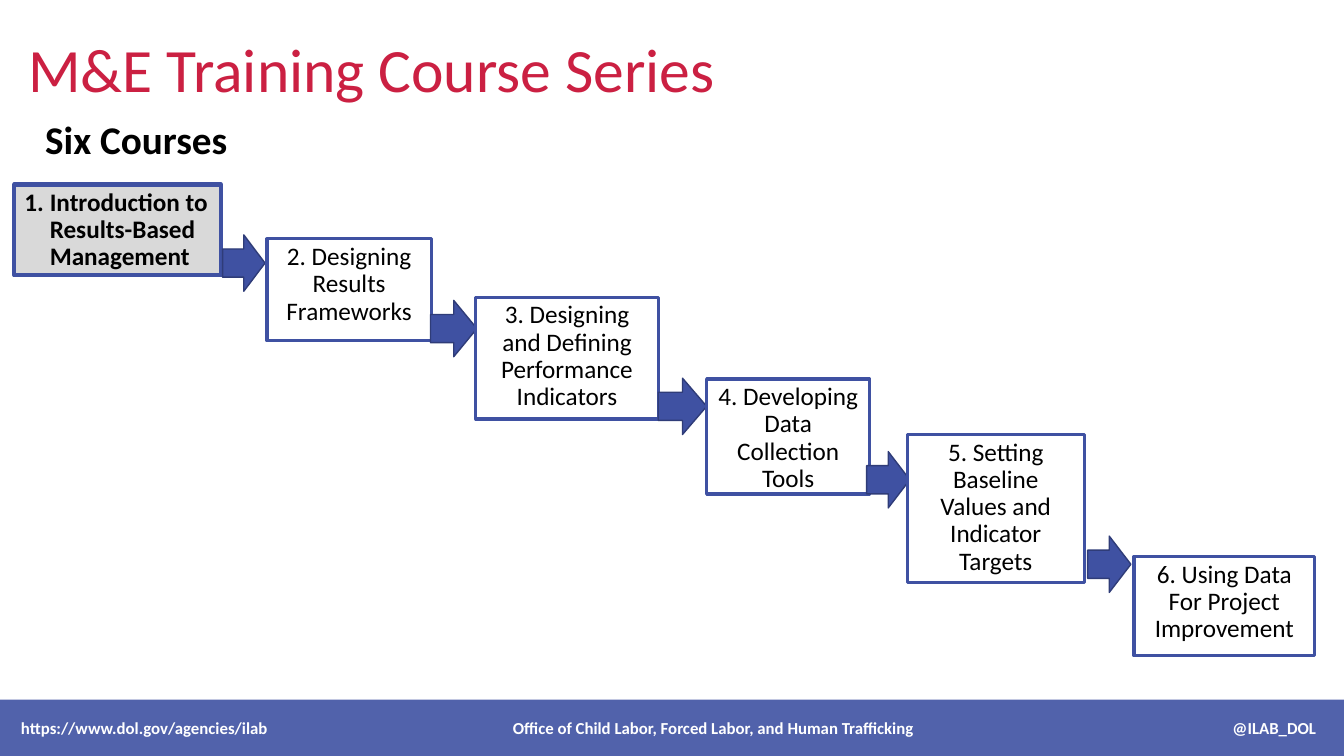
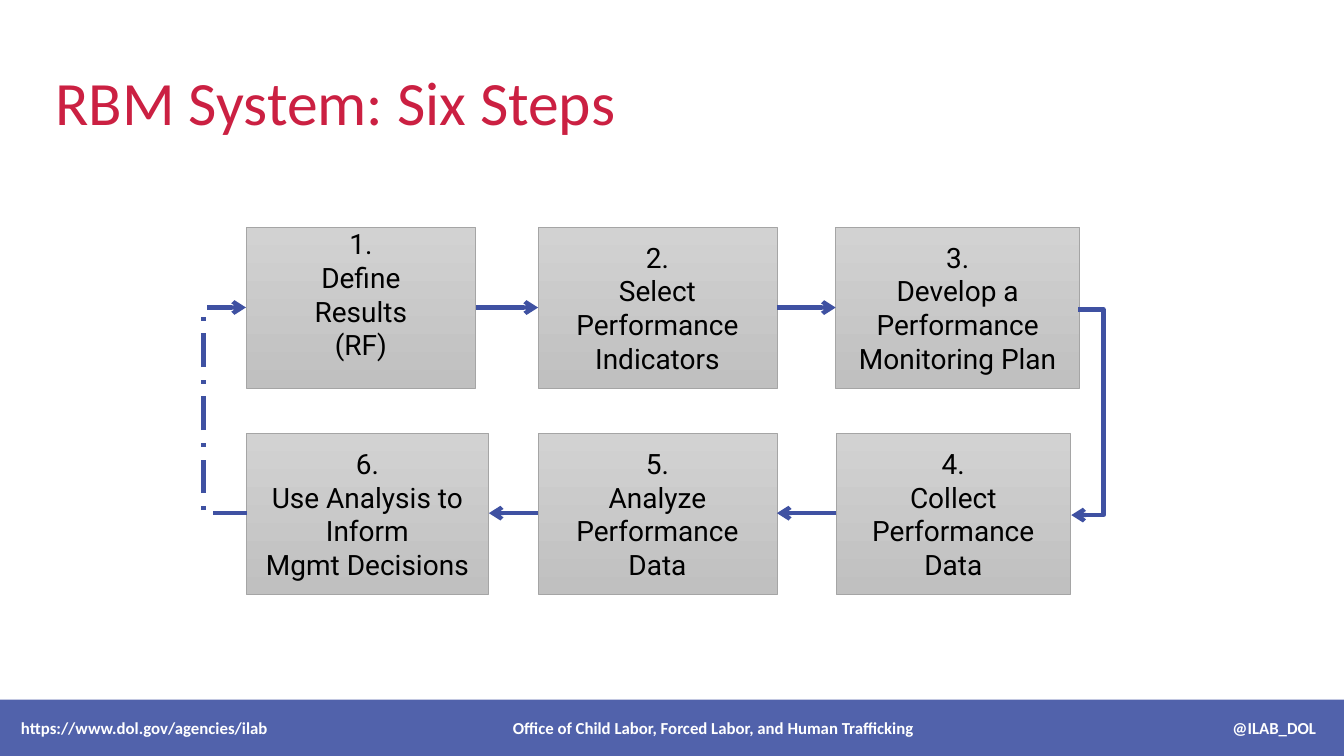
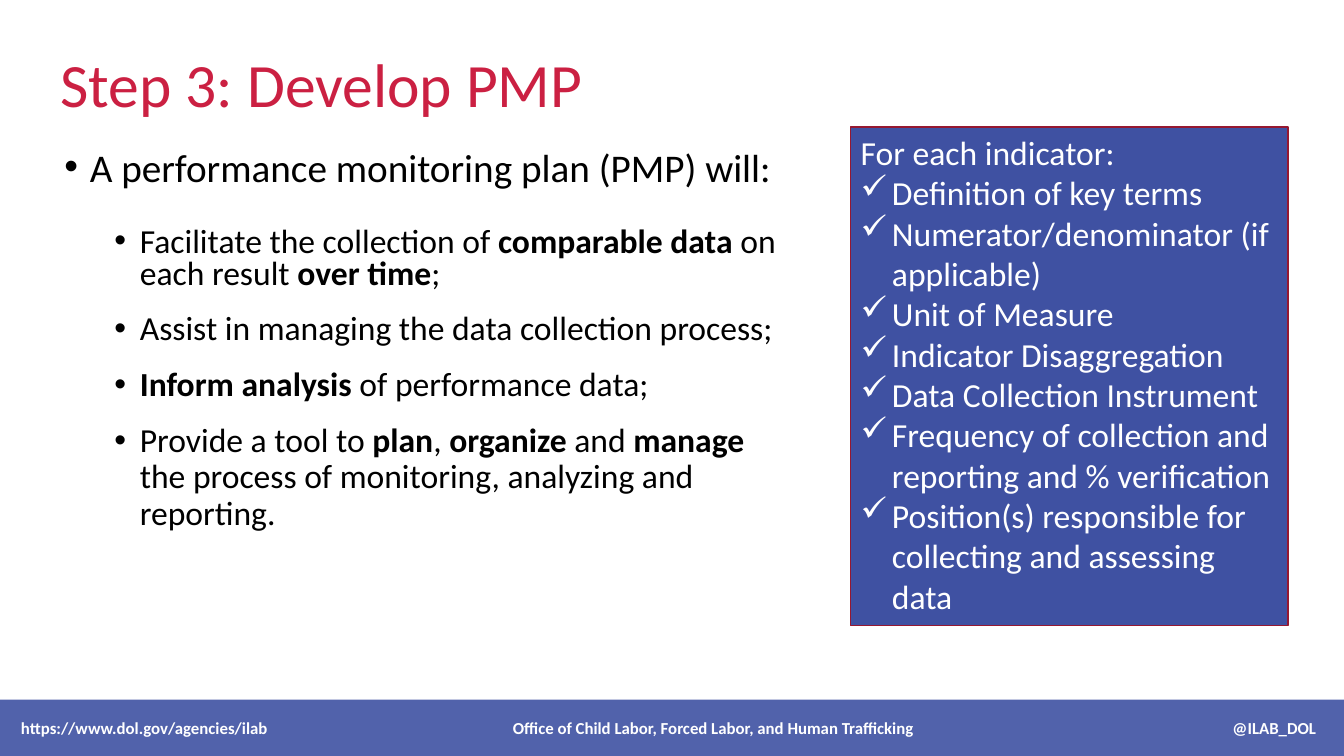
import pptx
import pptx.dml.color
import pptx.enum.dml
import pptx.enum.shapes
import pptx.enum.text
import pptx.oxml
import pptx.oxml.ns
import pptx.util

Cm = pptx.util.Cm
Pt = pptx.util.Pt
RGBColor = pptx.dml.color.RGBColor
Align = pptx.enum.text.PP_ALIGN
Anchor = pptx.enum.text.MSO_ANCHOR
Shape = pptx.enum.shapes.MSO_SHAPE
Connector = pptx.enum.shapes.MSO_CONNECTOR
Dash = pptx.enum.dml.MSO_LINE

BLUE = RGBColor(0x3F, 0x51, 0xA2)
NAVY = RGBColor(0x2F, 0x3C, 0x78)
RED = RGBColor(0xCB, 0x20, 0x42)
MAROON = RGBColor(0x96, 0x18, 0x31)
BLACK = RGBColor(0, 0, 0)
WHITE = RGBColor(0xFF, 0xFF, 0xFF)
PALE_GRAY = RGBColor(0xD9, 0xD9, 0xD9)
EDGE_GRAY = RGBColor(0xA5, 0xA5, 0xA5)
STEP_GRAYS = RGBColor(0xD2, 0xD2, 0xD2), RGBColor(0xC0, 0xC0, 0xC0)


def add_xml(parent, tag, **attributes):
    child = pptx.oxml.parse_xml(f"<a:{tag} {pptx.oxml.ns.nsdecls('a')}/>")
    for name, value in attributes.items():
        child.set(name, str(value))
    parent.append(child)
    return child


def write(frame, text, size=18, color=BLACK, bold=False, font="Calibri",
          align=Align.LEFT, spacing=1.0, before=0, bullet=None, margin=0.64,
          hang=0.64, level=0):
    for line in text.split("\n"):
        para = frame.add_paragraph() if frame.text else frame.paragraphs[0]
        para.alignment = align
        para.line_spacing = spacing
        para.space_before = Pt(before)
        para.level = level
        if bullet:
            properties = para._p.get_or_add_pPr()
            properties.set("marL", str(Cm(margin)))
            properties.set("indent", str(-Cm(hang)))
            if bullet == "1.":
                add_xml(properties, "buAutoNum", type="arabicPeriod")
            else:
                add_xml(properties, "buChar", char=bullet)
        for index, piece in enumerate(line.split("*")):
            if piece:
                span = para.add_run()
                span.text = piece
                span.font.name = font
                span.font.size = Pt(size)
                span.font.color.rgb = color
                span.font.bold = bold or index % 2 == 1


class Slides:
    def __init__(self):
        self.deck = pptx.Presentation()
        self.deck.slide_width = Cm(33.87)
        self.deck.slide_height = Cm(19.05)
        self.page = None

    def start(self, title, at, layout, anchor=Anchor.MIDDLE):
        self.page = self.deck.slides.add_slide(self.deck.slide_layouts[layout])
        frame = self.place(self.page.shapes.title, at, anchor)
        write(frame, title, size=44, color=RED, spacing=0.9)
        self.footer()

    def place(self, box, at, anchor=Anchor.TOP):
        box.left, box.top, box.width, box.height = map(Cm, at)
        frame = box.text_frame
        frame.word_wrap = True
        frame.auto_size = pptx.enum.text.MSO_AUTO_SIZE.NONE
        frame.vertical_anchor = anchor
        return frame

    def paint(self, box, fill, line=None, weight=1):
        box.fill.solid()
        box.fill.fore_color.rgb = fill
        if line is None:
            box.line.fill.background()
        else:
            box.line.color.rgb = line
            box.line.width = Pt(weight)

    def shape(self, at, fill, line=None, weight=1, kind=Shape.RECTANGLE):
        box = self.page.shapes.add_shape(kind, *map(Cm, at))
        box.shadow.inherit = False
        self.paint(box, fill, line, weight)
        self.place(box, at)
        return box

    def footer(self):
        band = self.shape((0, 17.63, 33.96, 1.42), BLUE)
        color = band._element.spPr.find(".//" + pptx.oxml.ns.qn("a:srgbClr"))
        add_xml(color, "alpha", val=90000)
        frame = band.text_frame
        frame.vertical_anchor = Anchor.MIDDLE
        frame.margin_left = Cm(0.53)
        write(frame, "https://www.dol.gov/agencies/ilab\t"
              "Office of Child Labor, Forced Labor, and Human Trafficking\t"
              "@ILAB_DOL", size=12, color=WHITE, bold=True)
        tabs = add_xml(frame.paragraphs[0]._p.get_or_add_pPr(), "tabLst")
        add_xml(tabs, "tab", pos=Cm(17.45), algn="ctr")
        add_xml(tabs, "tab", pos=Cm(32.64), algn="r")

    def text(self, text, at, **style):
        box = self.page.shapes.add_textbox(*map(Cm, at))
        write(self.place(box, at), text, **style)

    def body(self, at):
        box = self.page.placeholders[1]
        self.place(box, at)
        return box

    def step(self, text, at, anchor):
        box = self.shape(at, PALE_GRAY, EDGE_GRAY, 0.5)
        box.fill.gradient()
        box.fill.gradient_angle = 270
        for stop, color in zip(box.fill.gradient_stops, STEP_GRAYS):
            stop.color.rgb = color
        frame = box.text_frame
        frame.word_wrap = False
        frame.vertical_anchor = anchor
        if anchor == Anchor.TOP:
            frame.margin_top = 0
        write(frame, text, size=20, font="Roboto", align=Align.CENTER)

    def arrow(self, start, end, bend=None, dash=None):
        kind = Connector.STRAIGHT if bend is None else Connector.ELBOW
        link = self.page.shapes.add_connector(kind, *map(Cm, start + end))
        link.line.color.rgb = BLUE
        link.line.width = Pt(3)
        if dash:
            link.line.dash_style = dash
        properties = link._element.spPr
        add_xml(link.line._get_or_add_ln(), "tailEnd", type="arrow")
        add_xml(properties, "effectLst")
        if bend is not None:
            ratio = (bend - start[0]) / (end[0] - start[0])
            guides = properties.find(".//" + pptx.oxml.ns.qn("a:avLst"))
            add_xml(guides, "gd", name="adj1", fmla=f"val {round(ratio * 100000)}")


def course_series(slides):
    slides.start("M&E Training Course Series", (0.46, 0, 29.21, 3.68), layout=1)
    slides.text("Six Courses", (0.89, 2.79, 5.16, 1.45), size=28, bold=True)
    first = slides.body((0.36, 4.65, 5.21, 2.29))
    slides.paint(first, PALE_GRAY, BLUE, 3)
    write(first.text_frame, "Introduction to Results-Based Management",
          bold=True, spacing=0.9, bullet="1.")
    courses = [
        ("2. Designing Results Frameworks",
         (6.73, 6.02, 4.14, 2.57), (5.61, 5.92, 1.07)),
        ("3. Designing and Defining Performance Indicators",
         (11.99, 7.49, 4.6, 3.07), (10.85, 7.57, 1.17)),
        ("4. Developing Data Collection Tools",
         (17.81, 9.55, 4.11, 2.9), (16.59, 9.53, 1.22)),
        ("5. Setting Baseline Values and Indicator Targets",
         (22.86, 10.95, 4.47, 3.73), (21.84, 11.38, 1.09)),
        ("6. Using Data For Project Improvement",
         (28.58, 14.02, 4.55, 2.51), (27.41, 13.51, 1.09)),
    ]
    for text, at, arrow in courses:
        slides.shape(arrow + (1.42,), BLUE, NAVY, kind=Shape.RIGHT_ARROW)
        box = slides.shape(at, WHITE, BLUE, 2.25)
        write(box.text_frame, text, align=Align.CENTER, spacing=0.9)


def six_steps(slides):
    slides.start("RBM System: Six Steps", (1.14, 0.81, 29.36, 3.68), layout=5)
    height = 4.06
    upper = [("1.\nDefine\nResults\n(RF)", 6.2, 5.79),
             ("2.\nSelect\nPerformance\nIndicators", 13.56, 6.02),
             ("3.\nDevelop a\nPerformance\nMonitoring Plan", 21.06, 6.15)]
    lower = [("6.\nUse Analysis to\nInform\nMgmt Decisions", 6.2, 6.12),
             ("5.\nAnalyze\nPerformance\nData", 13.56, 6.02),
             ("4.\nCollect\nPerformance\nData", 21.08, 5.89)]
    for row, top, middle in ((upper, 5.72, 7.75), (lower, 10.92, 12.93)):
        for text, left, width in row:
            anchor = Anchor.TOP if text.startswith("1.") else Anchor.MIDDLE
            slides.step(text, (left, top, width, height), anchor)
        for (_, left, width), (_, following, _) in zip(row, row[1:]):
            ends = (left + width, middle), (following, middle)
            slides.arrow(*(ends if row is upper else ends[::-1]))
    slides.arrow((27.18, 7.8), (27, 12.98), bend=27.81)
    slides.arrow((6.22, 12.93), (6.2, 7.75), bend=5.13, dash=Dash.LONG_DASH_DOT)


def develop_plan(slides):
    slides.start("Step 3: Develop PMP", (1.27, 0.66, 26.95, 2.51), layout=1,
                 anchor=Anchor.BOTTOM)
    frame = slides.body((1.37, 3.71, 18.85, 12.27)).text_frame
    write(frame, "A performance monitoring plan (PMP) will:", size=28,
          spacing=0.8, bullet="•")
    points = [
        ("Facilitate the collection of *comparable data* on each result "
         "*over time*;", 0.8, 27),
        ("Assist in managing the data collection process;", 0.9, 14),
        ("*Inform analysis* of performance data;", 0.9, 14),
        ("Provide a tool to *plan*, *organize* and *manage* the process of "
         "monitoring, analyzing and reporting.", 0.9, 14),
    ]
    for text, spacing, before in points:
        write(frame, text, size=24, spacing=spacing, before=before, bullet="•",
              margin=1.9, level=1)
    panel = slides.shape((21.44, 3.2, 11.02, 12.57), BLUE, MAROON)
    write(panel.text_frame, "For each indicator:", size=24, color=WHITE)
    write(panel.text_frame, "Definition of key terms\n"
          "Numerator/denominator (if applicable)\n"
          "Unit of Measure\n"
          "Indicator Disaggregation\n"
          "Data Collection Instrument\n"
          "Frequency of collection and reporting and % verification\n"
          "Position(s) responsible for collecting and assessing data",
          size=24, color=WHITE, bullet="✓", margin=0.79, hang=0.79)


def main():
    slides = Slides()
    course_series(slides)
    six_steps(slides)
    develop_plan(slides)
    slides.deck.save("out.pptx")


if __name__ == "__main__":
    main()
